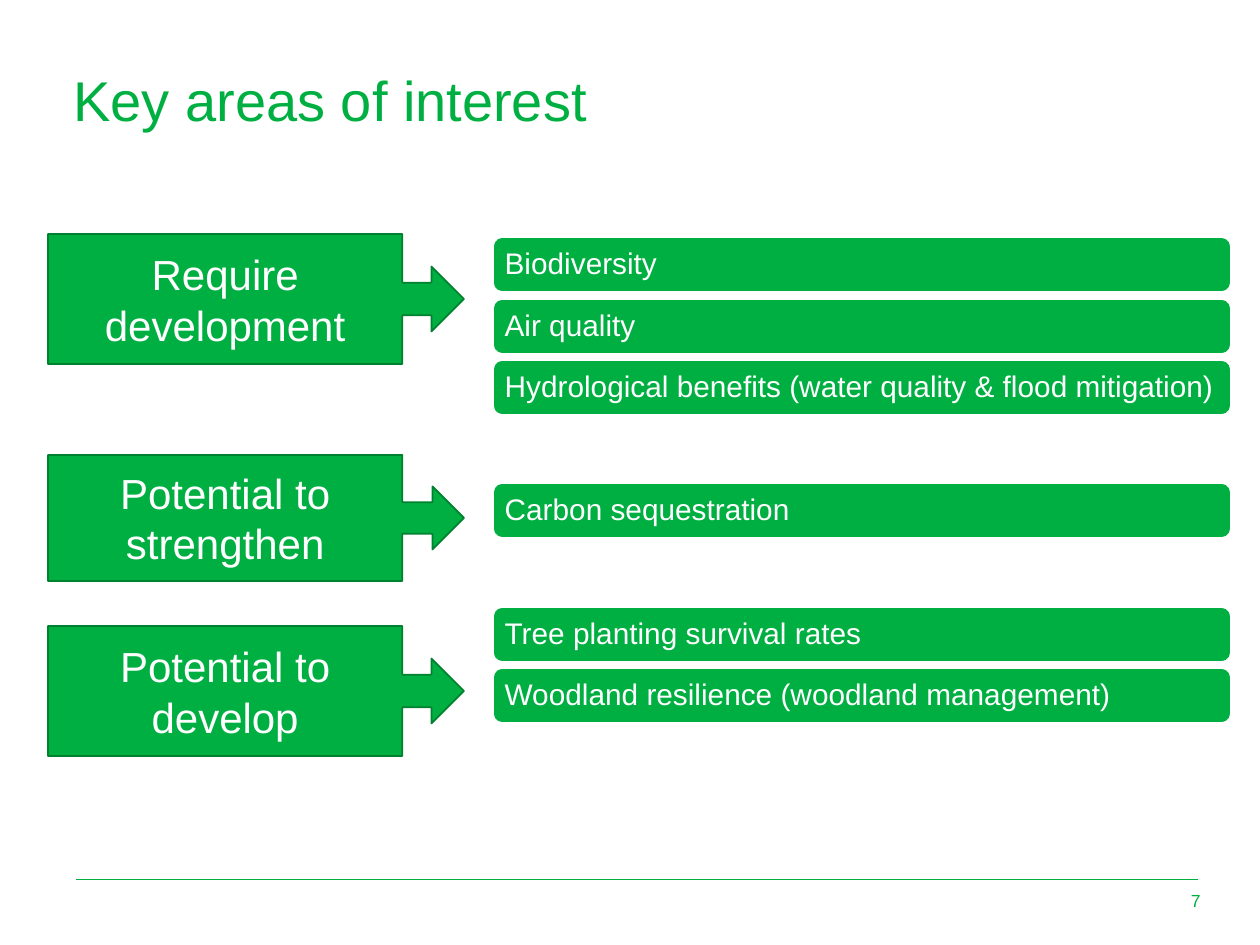
from lxml.etree import SubElement
from pptx import Presentation
from pptx.dml.color import RGBColor
from pptx.enum.shapes import MSO_CONNECTOR as Line, MSO_SHAPE as Shape
from pptx.enum.text import MSO_ANCHOR as Anchor, PP_ALIGN as Align
from pptx.oxml.ns import qn
from pptx.util import Pt

SCALE = 914400 // 126
COLORS = {"green": "00AF41", "edge": "008130", "white": "FFFFFF"}
BAR_TOP, BAR_PITCH = 237, 61.6
BARS = {
    0: "Biodiversity",
    1: "Air quality",
    2: "Hydrological benefits (water quality & flood mitigation)",
    4: "Carbon sequestration",
    6: "Tree planting survival rates",
    7: "Woodland resilience (woodland management)",
}
CALLOUTS = [
    ("Require development", 234, 130),
    ("Potential to strengthen", 455, 126),
    ("Potential to develop", 626, 130),
]
BAR_FRAME = dict.fromkeys(("margin_left", "margin_right", "margin_top", "margin_bottom"), 9 * SCALE)


def px(*lengths):
    """Turn pixel lengths into EMU."""
    return [round(length) * SCALE for length in lengths]


def color(name):
    """Look up a named colour."""
    return RGBColor.from_string(COLORS[name])


def set_all(target, values):
    """Set every attribute in a dict of format values."""
    for name, value in values.items():
        setattr(target, name, value)


def write(box, text, size, ink, frame=None, para=None):
    """Put one formatted paragraph into a box."""
    set_all(box.text_frame, {"word_wrap": True, **(frame or {})})
    line = box.text_frame.paragraphs[0]
    set_all(line, para or {})
    span = line.add_run()
    span.text = text
    set_all(span.font, {"name": "Arial", "size": Pt(size)})
    span.font.color.rgb = color(ink)


def add_label(page, area, *args, **formats):
    """Add a plain text box."""
    write(page.shapes.add_textbox(*px(*area)), *args, **formats)


def add_block(page, kind, area, edge):
    """Add a green shape with a thin outline."""
    block = page.shapes.add_shape(kind, *px(*area))
    block.shadow.inherit = False
    block.fill.solid()
    block.fill.fore_color.rgb = color("green")
    block.line.color.rgb = color(edge)
    block.line.width = Pt(1)
    return block


def add_bar(page, row, text):
    """Add the topic bar of one row."""
    bar = add_block(page, Shape.ROUNDED_RECTANGLE, (493, BAR_TOP + row * BAR_PITCH, 738, 55), "white")
    write(bar, text, 17, "white", {**BAR_FRAME, "vertical_anchor": Anchor.MIDDLE},
          {"alignment": Align.LEFT, "line_spacing": 0.9})


def add_callout(page, text, top, height):
    """Add a category box with an arrow on its right."""
    callout = add_block(page, Shape.RIGHT_ARROW_CALLOUT, (48, top, 416, height), "edge")
    callout.adjustments[3] = 0.852
    write(callout, text, 24, "white", {"vertical_anchor": Anchor.MIDDLE}, {"alignment": Align.CENTER})


def add_rule(page, left, right, top):
    """Add the thin footer line."""
    rule = page.shapes.add_connector(Line.STRAIGHT, *px(left, top, right, top))
    rule.line.color.rgb = color("green")
    rule.line.width = Pt(0.5)
    SubElement(rule._element.spPr, qn("a:effectLst"))


def main():
    """Build and save the slide."""
    deck = Presentation()
    deck.slide_width, deck.slide_height = px(1260, 945)
    page = deck.slides.add_slide(deck.slide_layouts[6])
    add_rule(page, 76, 1198, 879)
    add_label(page, (61, 67, 581, 94), "Key areas of interest", 32, "green", para={"line_spacing": 0.9})
    add_label(page, (1156, 876, 57, 50), "7", 10, "green",
              frame={"vertical_anchor": Anchor.MIDDLE}, para={"alignment": Align.RIGHT})
    for row, text in BARS.items():
        add_bar(page, row, text)
    for callout in CALLOUTS:
        add_callout(page, *callout)
    deck.save("out.pptx")


if __name__ == "__main__":
    main()
